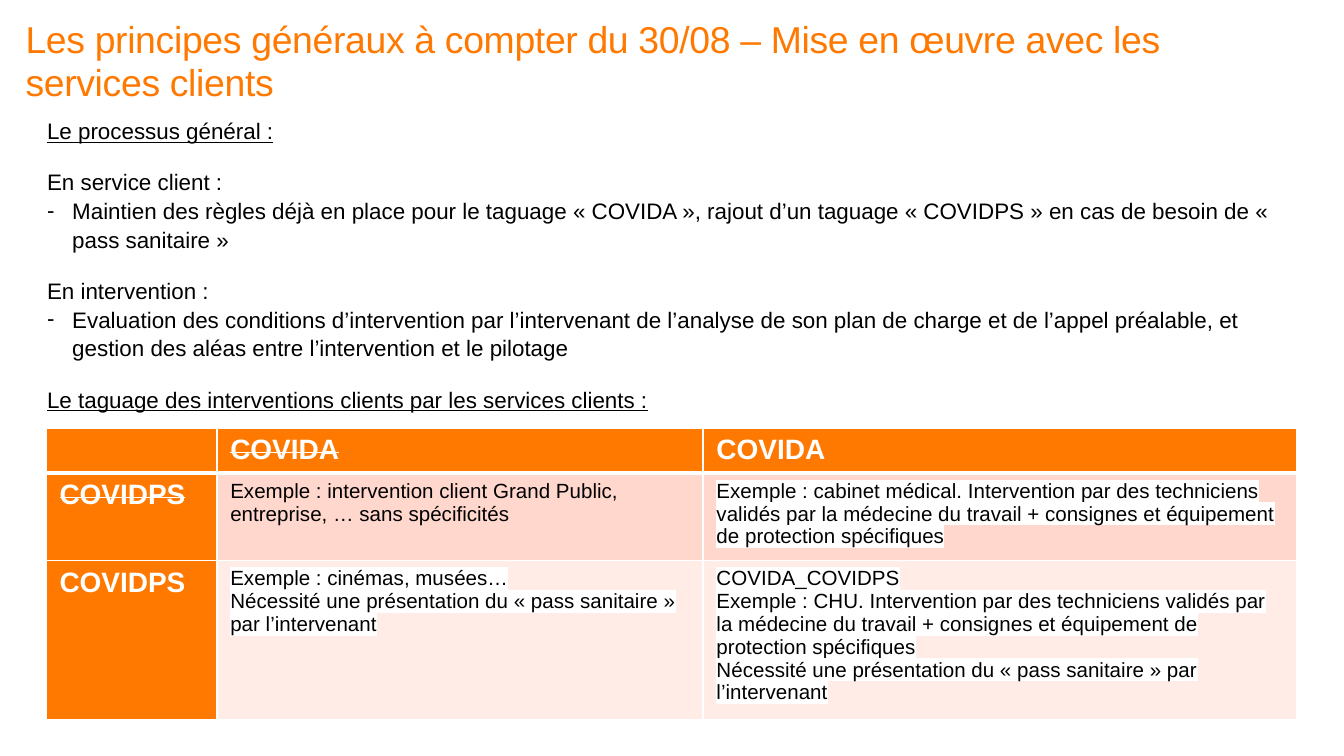
from dataclasses import dataclass

from lxml import etree
from pptx import Presentation
from pptx.dml.color import RGBColor
from pptx.enum.text import MSO_ANCHOR, MSO_AUTO_SIZE, PP_ALIGN
from pptx.oxml.ns import qn
from pptx.util import Pt

LEFT = PP_ALIGN.LEFT
TOP = MSO_ANCHOR.TOP
FIXED = MSO_AUTO_SIZE.NONE


@dataclass(frozen=True)
class Theme:
    font: str = "Arial"
    orange: str = "FF7900"
    rose: str = "FFD7CC"
    pale: str = "FFECE7"
    white: str = "FFFFFF"
    black: str = "000000"
    title: int = 20
    body: int = 12
    head: int = 15
    cell: int = 11


THEME = Theme()

TITLE = ("Les principes généraux à compter du 30/08 – Mise en œuvre "
         "avec les services clients")

# Body lines: kind, text
LINES = [
    ("head", "Le processus général :"),
    ("lead", "En service client :"),
    ("item", "Maintien des règles déjà en place pour le taguage « COVIDA », "
             "rajout d’un taguage « COVIDPS » en cas de besoin de "
             "« pass sanitaire »"),
    ("lead", "En intervention :"),
    ("item", "Evaluation des conditions d’intervention par l’intervenant de "
             "l’analyse de son plan de charge et de l’appel préalable, et "
             "gestion des aléas entre l’intervention et le pilotage"),
    ("head", "Le taguage des interventions clients par les services clients :"),
]

TEAM = ("Intervention par des techniciens validés par la médecine du travail "
        "+ consignes et équipement de protection spécifiques")
PASS = "Nécessité une présentation du « pass sanitaire » par l’intervenant"

# Table cells, one list of paragraphs each
CELLS = [
    [[""], ["COVIDA"], ["COVIDA"]],
    [["COVIDPS"],
     ["Exemple : intervention client Grand Public, entreprise, … "
      "sans spécificités"],
     ["Exemple : cabinet médical. " + TEAM]],
    [["COVIDPS"],
     ["Exemple : cinémas, musées…", PASS],
     ["COVIDA_COVIDPS", "Exemple : CHU. " + TEAM, PASS]],
]
STRUCK = {(0, 1), (1, 0)}
PLAIN = (1, 1)  # the only text cell without highlight
COLS = [91.5, 260.5, 318]
ROWS = [24.2, 46.8, 85.7]


def rgb(code):
    return RGBColor.from_string(code)


def style(para, size, color, bold=False):
    font = para.font
    font.name, font.size, font.bold = THEME.font, Pt(size), bold
    font.color.rgb = rgb(color)


def place(shape, left, top, width, height):
    shape.left, shape.top = Pt(left), Pt(top)
    shape.width, shape.height = Pt(width), Pt(height)
    frame = shape.text_frame
    frame.margin_left = frame.margin_right = 0
    frame.margin_top = frame.margin_bottom = 0
    frame.vertical_anchor, frame.auto_size = TOP, FIXED
    frame.word_wrap = True
    return frame


def add_title(slide):
    frame = place(slide.shapes.title, 13.7, 10.1, 670, 34)
    para = frame.paragraphs[0]
    run = para.add_run()
    run.text = TITLE
    para.alignment, para.line_spacing = LEFT, 0.96
    style(para, THEME.title, THEME.orange)
    run._r.get_or_add_rPr().set("spc", "-20")


def set_mark(para, mark):
    """Give the paragraph a hanging bullet, or none."""
    props = para._p.get_or_add_pPr()
    indent = Pt(13.5) if mark else 0
    props.set("marL", str(indent))
    props.set("indent", str(-indent))
    tag = etree.Element(qn("a:buChar" if mark else "a:buNone"))
    if mark:
        tag.set("char", mark)
    props.find(qn("a:defRPr")).addprevious(tag)


def add_body(slide):
    frame = place(slide.placeholders[1], 25.2, 61.9, 659, 220)
    for i, (kind, text) in enumerate(LINES):
        para = frame.add_paragraph() if i else frame.paragraphs[0]
        para.add_run().text = text
        para.alignment, para.line_spacing = LEFT, 1.07
        para.space_before = Pt(12 if i and kind != "item" else 0)
        style(para, THEME.body, THEME.black)
        para.font.underline = kind == "head"
        set_mark(para, "-" if kind == "item" else None)


def set_edge(cell, side, width):
    props = cell._tc.get_or_add_tcPr()
    line = etree.Element(qn("a:ln" + side), w=str(Pt(width)))
    fill = etree.SubElement(line, qn("a:solidFill"))
    etree.SubElement(fill, qn("a:srgbClr"), val=THEME.white)
    props.find(qn("a:solidFill")).addprevious(line)


def highlight(run):
    mark = etree.SubElement(run._r.get_or_add_rPr(), qn("a:highlight"))
    etree.SubElement(mark, qn("a:srgbClr"), val=THEME.white)


def fill_cell(cell, row, col, texts):
    head = row == 0 or col == 0
    cell.fill.solid()
    cell.fill.fore_color.rgb = rgb(
        THEME.orange if head else (THEME.rose, THEME.pale)[row - 1])
    for side in "LRTB":
        thick = (side == "B" and row == 0) or (side == "T" and row == 1)
        set_edge(cell, side, 3 if thick else 1)
    for i, text in enumerate(texts):
        frame = cell.text_frame
        para = frame.add_paragraph() if i else frame.paragraphs[0]
        if head:
            style(para, THEME.head, THEME.white, True)
        else:
            style(para, THEME.cell, THEME.black)
        if not text:
            continue
        run = para.add_run()
        run.text = text
        if (row, col) in STRUCK:
            run._r.get_or_add_rPr().set("strike", "sngStrike")
        if not head and (row, col) != PLAIN:
            highlight(run)


def add_grid(slide):
    table = slide.shapes.add_table(
        len(ROWS), len(COLS), Pt(24.7), Pt(229.2),
        Pt(sum(COLS)), Pt(sum(ROWS))).table
    table.first_col = True
    for col, width in zip(table.columns, COLS):
        col.width = Pt(width)
    for r, (height, cells) in enumerate(zip(ROWS, CELLS)):
        table.rows[r].height = Pt(height)
        for c, texts in enumerate(cells):
            fill_cell(table.cell(r, c), r, c, texts)


def main():
    deck = Presentation()
    deck.slide_width, deck.slide_height = Pt(720), Pt(405)
    slide = deck.slides.add_slide(deck.slide_layouts[1])
    add_title(slide)
    add_body(slide)
    add_grid(slide)
    deck.save("out.pptx")


if __name__ == "__main__":
    main()
